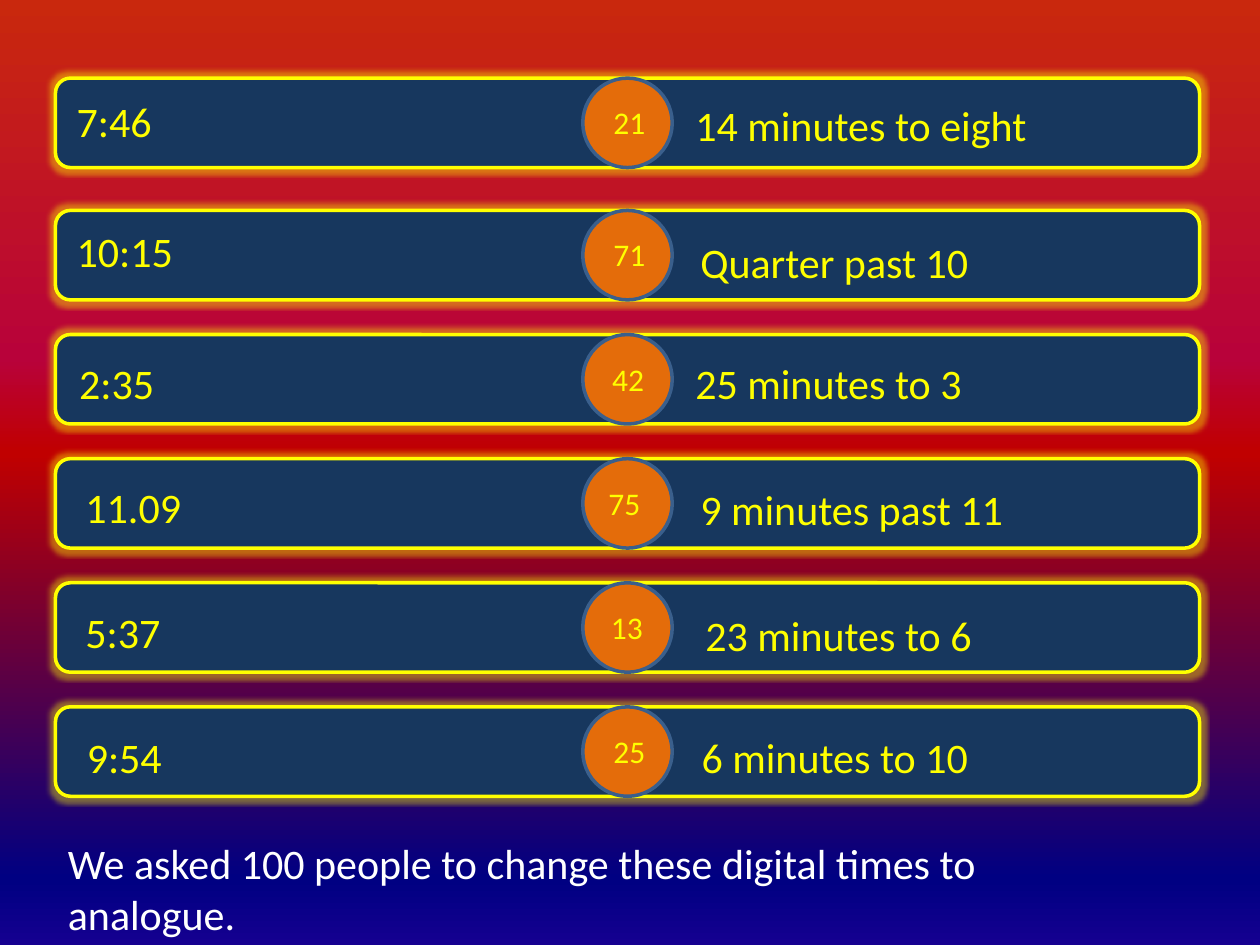
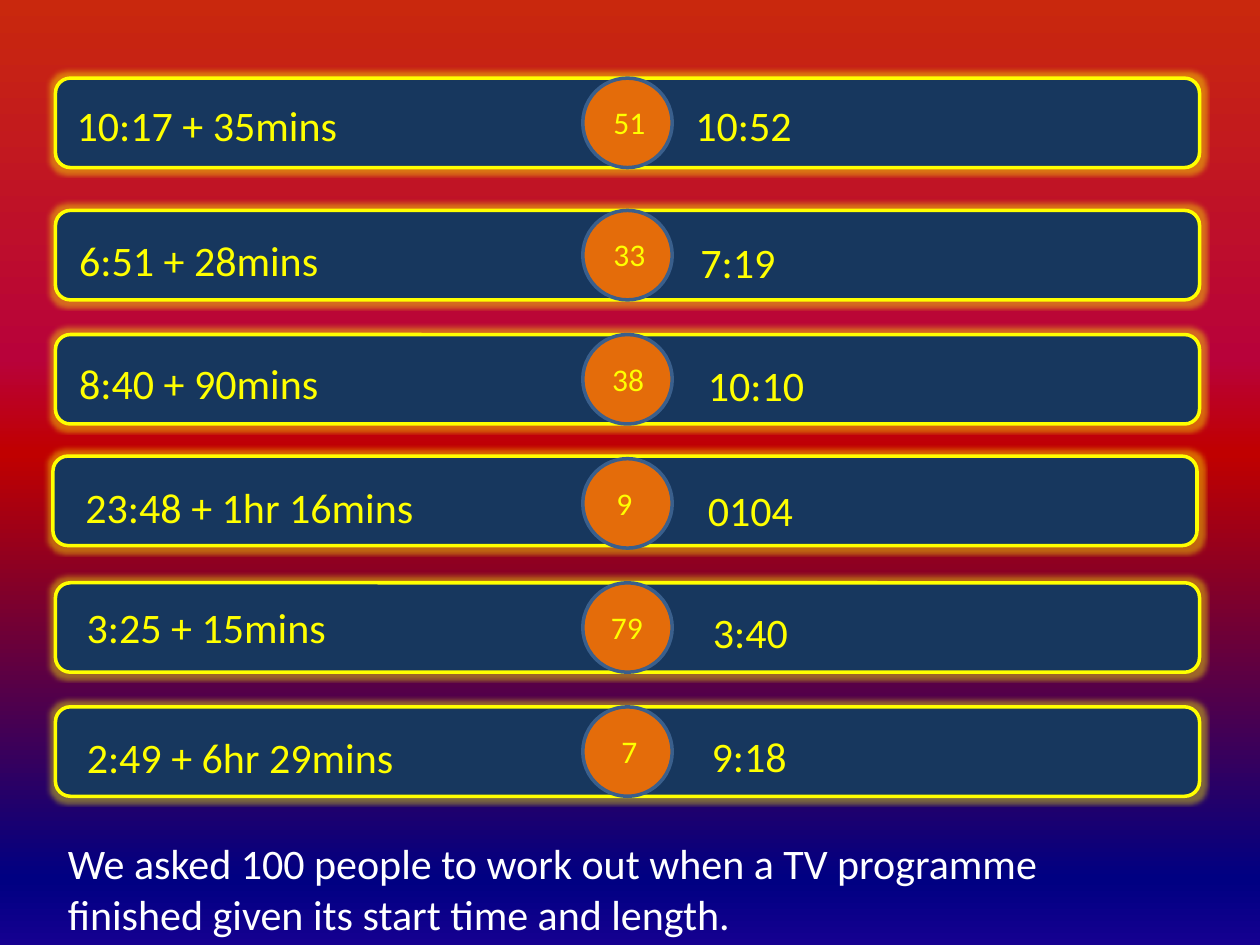
"""Build two quiz boards that pair times with answers and survey scores."""
from dataclasses import dataclass

from lxml import etree
from pptx import Presentation
from pptx.dml.color import RGBColor
from pptx.enum.shapes import MSO_SHAPE
from pptx.enum.text import MSO_AUTO_SIZE, PP_ALIGN
from pptx.oxml.ns import qn
from pptx.util import Inches, Pt

BAR, DISC = MSO_SHAPE.ROUNDED_RECTANGLE, MSO_SHAPE.OVAL
GROW = MSO_AUTO_SIZE.SHAPE_TO_FIT_TEXT
LEFT, CENTER = PP_ALIGN.LEFT, PP_ALIGN.CENTER


@dataclass(frozen=True)
class Theme:
    """Colours and type sizes of the boards."""
    font: str = "Calibri"
    text_size: int = 24
    score_size: int = 18
    outline: int = 2
    bar: str = "17375E"
    accent: str = "FFFF00"
    disc: str = "E46C0A"
    disc_line: str = "3A5F8C"
    caption: str = "FFFFFF"
    glow_radius: int = 5
    glow_alpha: int = 40
    backdrop: tuple = ((0, "C9280D"), (38, "B8023A"), (48, "C00000"),
                       (93, "000082"), (100, "150090"))


THEME = Theme()

# Each row: score, question and answer; a text has its shift from the
# column's left and the row's top, then its width.
BOARDS = [
    {
        "caption": "We asked 100 people to change these digital times to analogue.",
        "bar_shifts": {},
        "rows": [
            ("21", ("7:46", 0, 0.09, 1.2), ("14 minutes to eight", 0, 0.12, 3.75)),
            ("71", ("10:15", 0, 0.07, 1.63), ("Quarter past 10", 0.04, 0.16, 3.63)),
            ("42", ("2:35", 0.02, 0.13, 1.88), ("25 minutes to 3", 0, 0.13, 3.99)),
            ("75", ("11.09", 0.07, 0.13, 1.56), ("9 minutes past 11", 0.04, 0.15, 3.16)),
            ("13", ("5:37", 0.07, 0.14, 2.61), ("23 minutes to 6", 0.08, 0.16, 2.44)),
            ("25", ("9:54", 0.08, 0.15, 1.81), ("6 minutes to 10", 0.05, 0.15, 2.47)),
        ],
    },
    {
        "caption": "We asked 100 people to work out when a TV programme "
                   "finished given its start time and length.",
        "bar_shifts": {3: -0.02},
        "rows": [
            ("51", ("10:17 + 35mins", 0, 0.12, 2.91), ("10:52", 0, 0.12, 1.39)),
            ("33", ("6:51 + 28mins", 0.02, 0.14, 3.53), ("7:19", 0.04, 0.16, 1.35)),
            ("38", ("8:40 + 90mins", 0.02, 0.13, 2.51), ("10:10", 0.1, 0.15, 1.19)),
            ("9", ("23:48 + 1hr 16mins", 0.07, 0.13, 2.85), ("0104", 0.1, 0.16, 1.29)),
            ("79", ("3:25 + 15mins", 0.08, 0.1, 2.36), ("3:40", 0.14, 0.14, 1.73)),
            ("7", ("2:49 + 6hr 29mins", 0.08, 0.15, 2.68), ("9:18", 0.13, 0.14, 1.34)),
        ],
    },
]

WIDTH, HEIGHT = 10, 7.5
BAR_LEFT, BAR_WIDTH, BAR_HEIGHT = 0.44, 9.08, 0.71
FIRST_TOP, SECOND_TOP, LAST_TOP = 0.62, 1.67, 5.61
PITCH = (LAST_TOP - SECOND_TOP) / 4
ROW_TOPS = [FIRST_TOP] + [SECOND_TOP + i * PITCH for i in range(5)]
DISC_LEFT = BAR_LEFT + (BAR_WIDTH - BAR_HEIGHT) / 2
QUESTION_LEFT, ANSWER_LEFT = 0.51, 5.42
SCORE_LEFTS = [4.76, 4.76, 4.75, 4.72, 4.74, 4.76]
SCORE_DROP, SCORE_WIDTH, SCORE_HEIGHT = 0.15, 0.47, 0.4
TEXT_HEIGHT = 0.5
CAPTION_BOX = (BAR_LEFT, 6.6, 8.19, 0.91)


def add_colour(parent, colour, alpha=None):
    """Append an RGB colour, with an optional opacity in percent."""
    c = etree.SubElement(parent, qn("a:srgbClr"), val=colour)
    if alpha is not None:
        etree.SubElement(c, qn("a:alpha"), val=str(alpha * 1000))


def paint_backdrop(master):
    """Give every slide the vertical gradient through the master."""
    fill = master.background.fill
    fill.gradient()
    fill.gradient_angle = 270
    stops = master.element.find(".//" + qn("a:gsLst"))
    for stop in list(stops):
        stops.remove(stop)
    for position, colour in THEME.backdrop:
        add_colour(etree.SubElement(stops, qn("a:gs"), pos=str(position * 1000)), colour)


def add_shape(s, kind, box, fill, line):
    """Add an outlined preset shape without a shadow."""
    sp = s.shapes.add_shape(kind, *map(Inches, box))
    sp.shadow.inherit = False
    sp.fill.solid()
    sp.fill.fore_color.rgb = RGBColor.from_string(fill)
    sp.line.color.rgb = RGBColor.from_string(line)
    sp.line.width = Pt(THEME.outline)
    return sp


def add_glow(sp):
    """Surround a shape with the accent glow."""
    effects = sp.element.spPr.find(qn("a:effectLst"))
    glow = etree.SubElement(effects, qn("a:glow"), rad=str(Pt(THEME.glow_radius)))
    add_colour(glow, THEME.accent, THEME.glow_alpha)


def add_text(s, text, box, size=THEME.text_size, colour=THEME.accent, align=LEFT):
    """Add a wrapping text box in the theme's font."""
    tf = s.shapes.add_textbox(*map(Inches, box)).text_frame
    tf.word_wrap = True
    tf.auto_size = GROW
    tf.text = text
    p = tf.paragraphs[0]
    p.alignment = align
    font = p.runs[0].font
    font.name, font.size = THEME.font, Pt(size)
    font.color.rgb = RGBColor.from_string(colour)


def add_row(s, top, shift, score_left, row):
    """Add one bar with its question, score disc and answer."""
    score, *entries = row
    add_glow(add_shape(s, BAR, (BAR_LEFT + shift, top + shift, BAR_WIDTH, BAR_HEIGHT),
                       THEME.bar, THEME.accent))
    add_shape(s, DISC, (DISC_LEFT, top, BAR_HEIGHT, BAR_HEIGHT),
              THEME.disc, THEME.disc_line)
    for left, (text, dx, dy, width) in zip((QUESTION_LEFT, ANSWER_LEFT), entries):
        add_text(s, text, (left + dx, top + dy, width, TEXT_HEIGHT))
    add_text(s, score, (score_left, top + SCORE_DROP, SCORE_WIDTH, SCORE_HEIGHT),
             size=THEME.score_size, align=CENTER)


def main():
    """Build and save the deck."""
    prs = Presentation()
    prs.slide_width, prs.slide_height = Inches(WIDTH), Inches(HEIGHT)
    paint_backdrop(prs.slide_master)
    for board in BOARDS:
        s = prs.slides.add_slide(prs.slide_layouts.get_by_name("Blank"))
        for i, (top, left, row) in enumerate(zip(ROW_TOPS, SCORE_LEFTS, board["rows"])):
            add_row(s, top, board["bar_shifts"].get(i, 0), left, row)
        add_text(s, board["caption"], CAPTION_BOX, colour=THEME.caption)
    prs.save("out.pptx")


if __name__ == "__main__":
    main()
